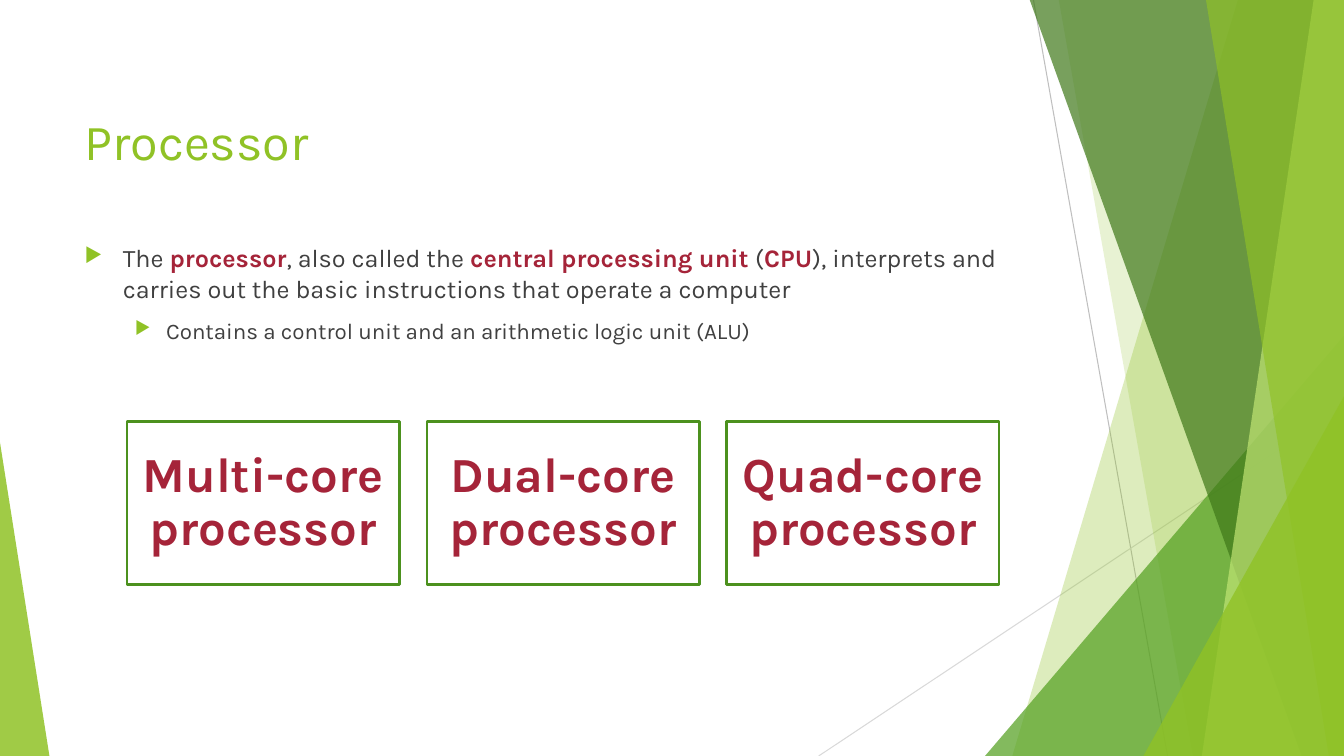
from lxml import etree
from pptx import Presentation
from pptx.dml.color import RGBColor
from pptx.enum import shapes, text
from pptx.oxml import ns
from pptx.util import Inches, Pt

FONT = "Karla"
LIME = RGBColor(0x90, 0xC2, 0x26)
GREEN = RGBColor(0x54, 0xA0, 0x21)
FOREST = RGBColor(0x3F, 0x78, 0x19)
PALE = RGBColor(0xC0, 0xE4, 0x74)
BORDER = RGBColor(0x4C, 0x91, 0x1E)
RED = RGBColor(0xA5, 0x24, 0x39)
INK = RGBColor(0x40, 0x40, 0x40)
GREY = RGBColor(0xBF, 0xBF, 0xBF)
LIGHT_GREY = RGBColor(0xD9, 0xD9, 0xD9)
WHITE = RGBColor(0xFF, 0xFF, 0xFF)

WIDTH, HEIGHT, TOP = 13.33, 7.5, -0.01

TITLE = "Processor"
# size, left margin, hanging indent, runs of (text, is key term)
BULLETS = [
    (18, 0.38, 0.38, [
        ("The ", False),
        ("processor", True),
        (", also called the ", False),
        ("central processing unit ", True),
        ("(", False),
        ("CPU", True),
        ("), interprets and carries out the basic instructions "
         "that operate a computer", False),
    ]),
    (16, 0.81, 0.31, [
        ("Contains a control unit and an arithmetic logic unit (ALU)", False),
    ]),
]
CORES = ["Multi-core processor", "Dual-core processor", "Quad-core processor"]
BOX_LEFT, BOX_TOP, BOX_W, BOX_H, BOX_STEP = 1.26, 4.18, 2.7, 1.62, 2.975

# start, end, colour
RAYS = [
    ((10.25, 0), (11.58, HEIGHT), GREY),
    ((WIDTH, 4.03), (8.12, HEIGHT), LIGHT_GREY),
]
# Bands reach the right edge: ("band", top-left x, bottom-left x, colour, opacity)
# Peaks stand on the bottom edge: ("peak", left, width, height, apex, colour, opacity)
FACETS = [
    ("band", 12.28, 10.04, LIME, 30),
    ("band", 10.5, 11.83, LIME, 20),
    ("peak", 9.77, 3.56, 4.17, 1, GREEN, 72),
    ("band", 10.21, 12.91, FOREST, 70),
    ("band", 13.03, 11.92, PALE, 70),
    ("band", 11.96, 13.18, LIME, 65),
    ("peak", 11.34, 1.99, 3.57, 1, LIME, 80),
    ("peak", 0, 0.49, 3.11, 0, LIME, 85),
]


def add_child(parent, tag, **attrs):
    return etree.SubElement(parent, ns.qn(tag), attrs)


def add_ray(slide, start, end, color):
    line = slide.shapes.add_connector(
        shapes.MSO_CONNECTOR.STRAIGHT, *map(Inches, start + end))
    line.line.color.rgb = color
    line.line.width = Pt(0.75)
    add_child(line._element.spPr, "a:effectLst")


def add_band(slide, top_x, bottom_x):
    points = [(top_x, TOP), (WIDTH, TOP), (WIDTH, HEIGHT), (bottom_x, HEIGHT)]
    start, *rest = [(Inches(x), Inches(y)) for x, y in points]
    outline = slide.shapes.build_freeform(*start)
    outline.add_line_segments(rest, close=True)
    return outline.convert_to_shape()


def add_peak(slide, left, width, height, apex):
    s = slide.shapes.add_shape(
        shapes.MSO_SHAPE.ISOSCELES_TRIANGLE, Inches(left),
        Inches(HEIGHT - height), Inches(width), Inches(height))
    s.adjustments[0] = apex
    return s


def add_facet(slide, kind, *values):
    *geometry, color, opacity = values
    s = (add_band if kind == "band" else add_peak)(slide, *geometry)
    s.shadow.inherit = False
    s.fill.solid()
    s.fill.fore_color.rgb = color
    s.line.fill.background()
    fill_color = s._element.spPr.find(".//" + ns.qn("a:srgbClr"))
    add_child(fill_color, "a:alpha", val=str(opacity * 1000))


def add_run(p, words, size, color, bold=False):
    r = p.add_run()
    r.text = words
    r.font.name = FONT
    r.font.size = Pt(size)
    r.font.color.rgb = color
    r.font.bold = bold


def add_text_box(slide, top, height):
    tf = slide.shapes.add_textbox(
        Inches(0.74), Inches(top), Inches(9.4), Inches(height)).text_frame
    tf.word_wrap = True
    return tf


def set_bullet(p, margin, hanging):
    pPr = p._p.get_or_add_pPr()
    pPr.set("marL", str(Inches(margin)))
    pPr.set("indent", str(-Inches(hanging)))
    add_child(add_child(pPr, "a:buClr"), "a:srgbClr", val=str(LIME))
    add_child(pPr, "a:buSzPct", val="80000")
    add_child(pPr, "a:buChar", char="▶")


def add_core_box(slide, left, label):
    s = slide.shapes.add_shape(
        shapes.MSO_SHAPE.RECTANGLE, Inches(left), Inches(BOX_TOP),
        Inches(BOX_W), Inches(BOX_H))
    s.shadow.inherit = False
    s.fill.solid()
    s.fill.fore_color.rgb = WHITE
    s.line.color.rgb = BORDER
    s.line.width = Pt(2)
    tf = s.text_frame
    tf.word_wrap = True
    tf.vertical_anchor = text.MSO_ANCHOR.MIDDLE
    tf.margin_left = tf.margin_right = Inches(0.15)
    tf.margin_top = tf.margin_bottom = Inches(0.15)
    p = tf.paragraphs[0]
    p.alignment = text.PP_ALIGN.CENTER
    p.line_spacing = 0.9
    add_run(p, label, 35, RED, True)


def main():
    prs = Presentation()
    prs.slide_width, prs.slide_height = Inches(WIDTH), Inches(HEIGHT)
    slide = prs.slides.add_slide(prs.slide_layouts[6])

    for ray in RAYS:
        add_ray(slide, *ray)
    for facet in FACETS:
        add_facet(slide, *facet)

    tf = add_text_box(slide, 0.67, 1.44)
    tf.vertical_anchor = text.MSO_ANCHOR.MIDDLE
    add_run(tf.paragraphs[0], TITLE, 36, LIME)

    tf = add_text_box(slide, 2.36, 4.24)
    for i, (size, margin, hanging, runs) in enumerate(BULLETS):
        p = tf.add_paragraph() if i else tf.paragraphs[0]
        p.level = i
        p.space_before = Pt(10)
        set_bullet(p, margin, hanging)
        for words, key in runs:
            add_run(p, words, size, RED if key else INK, key)

    for i, label in enumerate(CORES):
        add_core_box(slide, BOX_LEFT + i * BOX_STEP, label)

    prs.save("out.pptx")


if __name__ == "__main__":
    main()
